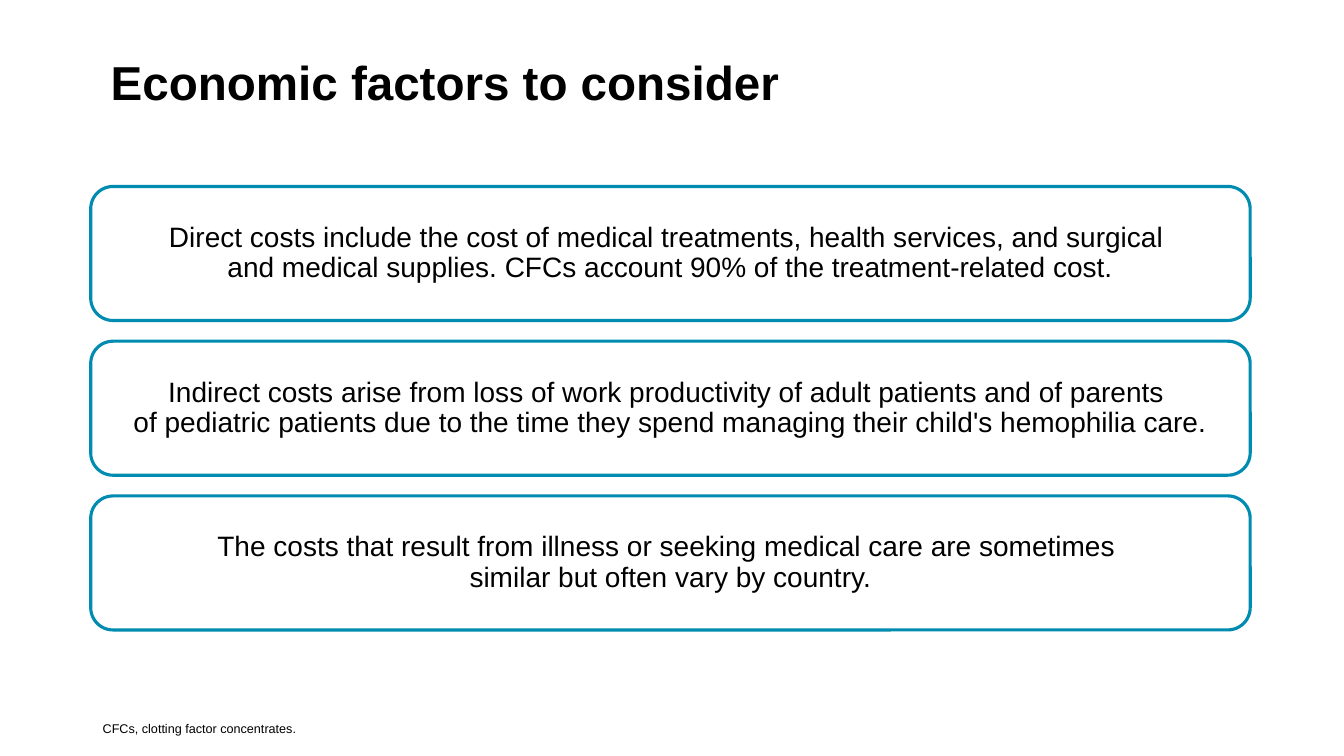
"""Build the slide on economic factors in hemophilia care."""
from pptx import Presentation
from pptx.dml.color import RGBColor
from pptx.enum.shapes import MSO_SHAPE as Shape
from pptx.enum.text import MSO_ANCHOR as Anchor, PP_ALIGN as Align
from pptx.util import Inches, Pt

TITLE = "Economic factors to consider"
COSTS = [
    "Direct costs include the cost of medical treatments, health services, and surgical \v"
    "and medical supplies. CFCs account 90% of the treatment-related cost.",
    "Indirect costs arise from loss of work productivity of adult patients and of parents \v"
    "of pediatric patients due to the time they spend managing their child's hemophilia care.",
    "The costs that result from illness or seeking medical care are sometimes \v"
    "similar but often vary by country.",
]
FOOTNOTE = "CFCs, clotting factor concentrates."
COLORS = {"text": "000000", "card": "FFFFFF", "border": "008BB0"}

WIDTH, HEIGHT = 13.33, 7.5
CARD_LEFT, CARD_TOP, CARD_WIDTH, CARD_HEIGHT = 0.9, 1.85, 11.5, 1.33
ROW_STEP = 1.535


def color(name):
    return RGBColor.from_string(COLORS[name])


def write(holder, text, size, anchor, align=Align.LEFT, spacing=1.0, bold=False):
    frame = holder.text_frame
    frame.word_wrap = True
    frame.vertical_anchor = anchor
    frame.text = text
    paragraph = frame.paragraphs[0]
    paragraph.alignment = align
    paragraph.line_spacing = spacing
    font = paragraph.font
    font.name, font.size, font.bold = "Arial", Pt(size), bold
    font.color.rgb = color("text")
    return frame


def main():
    deck = Presentation()
    deck.slide_width, deck.slide_height = Inches(WIDTH), Inches(HEIGHT)
    slide = deck.slides.add_slide(deck.slide_layouts[6])
    shapes = slide.shapes

    title = shapes.add_textbox(Inches(1), Inches(0.25), Inches(CARD_WIDTH), Inches(1.19))
    write(title, TITLE, 34, Anchor.MIDDLE, spacing=0.9, bold=True)

    for row, cost in enumerate(COSTS):
        card = shapes.add_shape(
            Shape.ROUNDED_RECTANGLE, Inches(CARD_LEFT), Inches(CARD_TOP + row * ROW_STEP),
            Inches(CARD_WIDTH), Inches(CARD_HEIGHT))
        card.shadow.inherit = False
        card.fill.solid()
        card.fill.fore_color.rgb = color("card")
        card.line.color.rgb = color("border")
        card.line.width = Pt(2.25)
        frame = write(card, cost, 20, Anchor.MIDDLE, Align.CENTER, 0.9)
        frame.margin_left = frame.margin_right = Inches(0.08)
        frame.margin_top = frame.margin_bottom = Inches(0.08)

    footnote = shapes.add_textbox(Inches(0.92), Inches(6.95), Inches(10.85), Inches(0.4))
    write(footnote, FOOTNOTE, 9, Anchor.BOTTOM)

    deck.save("out.pptx")


if __name__ == "__main__":
    main()
